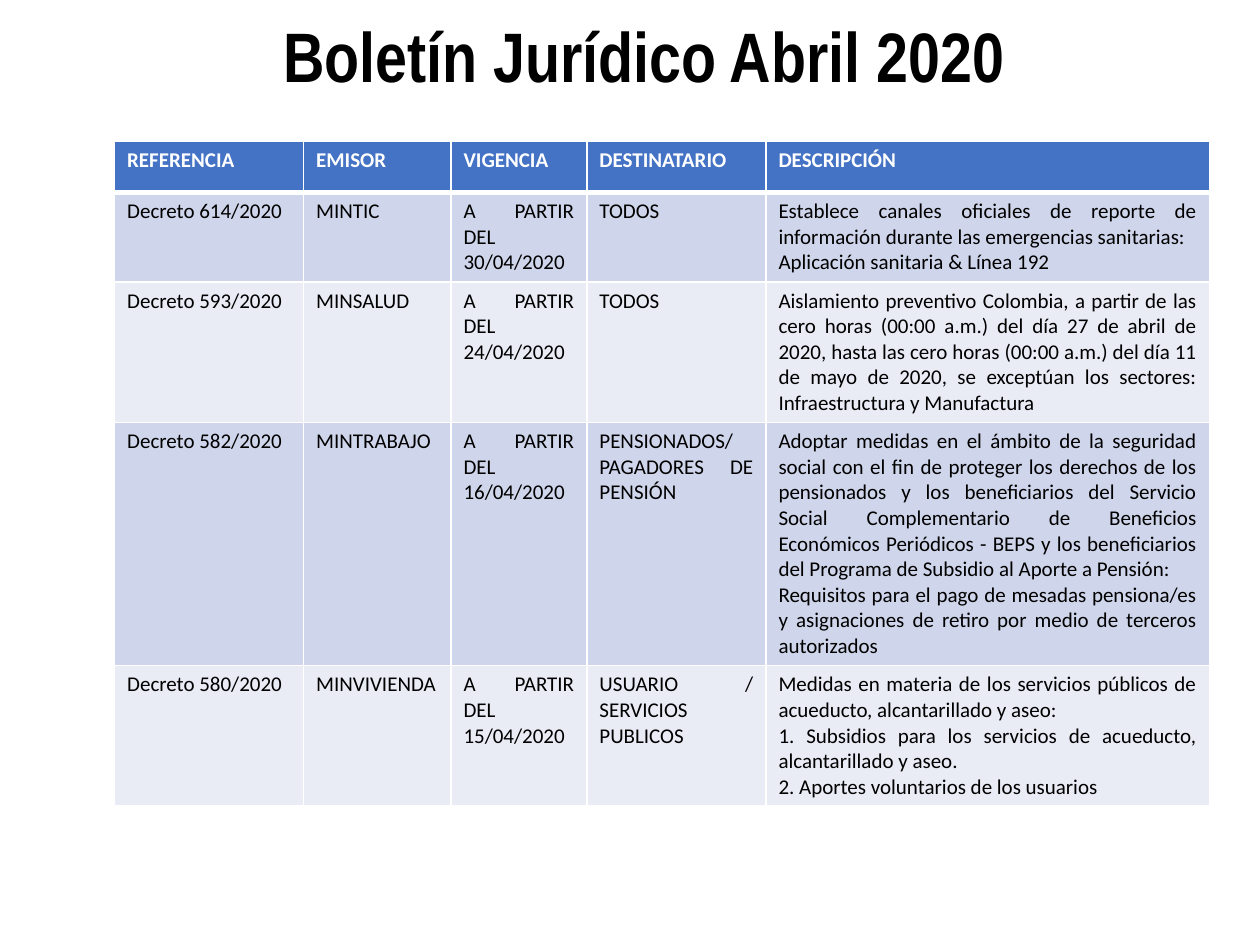
from lxml import etree
from pptx import Presentation
from pptx import util as u
from pptx.dml.color import RGBColor
from pptx.enum import text
from pptx.oxml.ns import qn


def style_font(font, name, size, color, bold):
    font.name = name
    font.size = u.Pt(size)
    font.bold = bold
    font.color.rgb = RGBColor.from_string(color)


def add_border(cell, side, color, points):
    line = etree.SubElement(cell._tc.get_or_add_tcPr(), qn(f"a:ln{side}"), w=str(u.Pt(points)))
    fill = etree.SubElement(line, qn("a:solidFill"))
    etree.SubElement(fill, qn("a:srgbClr"), val=color)


headings = ["REFERENCIA", "EMISOR", "VIGENCIA", "DESTINATARIO", "DESCRIPCIÓN"]
decrees = [
    ["Decreto 614/2020", "MINTIC", "A PARTIR DEL 30/04/2020", "TODOS",
     "Establece canales oficiales de reporte de información durante las emergencias sanitarias:\n"
     "Aplicación sanitaria & Línea 192"],
    ["Decreto 593/2020", "MINSALUD", "A PARTIR DEL 24/04/2020", "TODOS",
     "Aislamiento preventivo Colombia, a partir de las cero horas (00:00 a.m.) del día 27 de abril "
     "de 2020, hasta las cero horas (00:00 a.m.) del día 11 de mayo de 2020, se exceptúan los "
     "sectores: Infraestructura y Manufactura"],
    ["Decreto 582/2020", "MINTRABAJO", "A PARTIR DEL 16/04/2020",
     "PENSIONADOS/\nPAGADORES DE PENSIÓN",
     "Adoptar medidas en el ámbito de la seguridad social con el fin de proteger los derechos de "
     "los pensionados y los beneficiarios del Servicio Social Complementario de Beneficios "
     "Económicos Periódicos - BEPS y los beneficiarios del Programa de Subsidio al Aporte a "
     "Pensión:\n"
     "Requisitos para el pago de mesadas pensiona/es y asignaciones de retiro por medio de "
     "terceros autorizados"],
    ["Decreto 580/2020", "MINVIVIENDA", "A PARTIR DEL 15/04/2020",
     "USUARIO / SERVICIOS PUBLICOS",
     "Medidas en materia de los servicios públicos de acueducto, alcantarillado y aseo:\n"
     "1. Subsidios para los servicios de acueducto, alcantarillado y aseo.\n"
     "2. Aportes voluntarios de los usuarios"],
]
column_widths = [3.81, 2.97, 2.74, 3.61, 8.94]
row_heights = [1.04, 1.77, 2.8, 4.87, 2.8]

prs = Presentation()
prs.slide_width = u.Cm(25.4)
prs.slide_height = u.Cm(19.05)
slide = prs.slides.add_slide(prs.slide_layouts[6])

bulletin = slide.shapes.add_table(
    len(row_heights), len(column_widths), u.Cm(2.31), u.Cm(2.84),
    u.Cm(sum(column_widths)), u.Cm(sum(row_heights))).table
for column, width in zip(bulletin.columns, column_widths):
    column.width = u.Cm(width)
for row, height in zip(bulletin.rows, row_heights):
    row.height = u.Cm(height)

for r, entries in enumerate([headings] + decrees):
    is_heading = r == 0
    row_color = "4472C4" if is_heading else ("E9EBF5", "CFD5EA")[r % 2]
    for c, entry in enumerate(entries):
        cell = bulletin.cell(r, c)
        for side in "LRTB":
            thick = (is_heading and side == "B") or (r == 1 and side == "T")
            add_border(cell, side, "FFFFFF", 3 if thick else 1)
        cell.fill.solid()
        cell.fill.fore_color.rgb = RGBColor.from_string(row_color)
        cell.text = entry
        for paragraph in cell.text_frame.paragraphs:
            if not is_heading:
                paragraph.alignment = text.PP_ALIGN.JUSTIFY
            style_font(paragraph.font, "Calibri", 12,
                       "FFFFFF" if is_heading else "000000", is_heading)

title = slide.shapes.add_textbox(u.Cm(5.46), u.Cm(0.13), u.Cm(15.19), u.Cm(1.96)).text_frame
title.word_wrap = False
title.auto_size = text.MSO_AUTO_SIZE.SHAPE_TO_FIT_TEXT
title.text = "Boletín Jurídico Abril 2020"
style_font(title.paragraphs[0].font, "Arial Narrow", 40, "000000", True)

prs.save("out.pptx")
